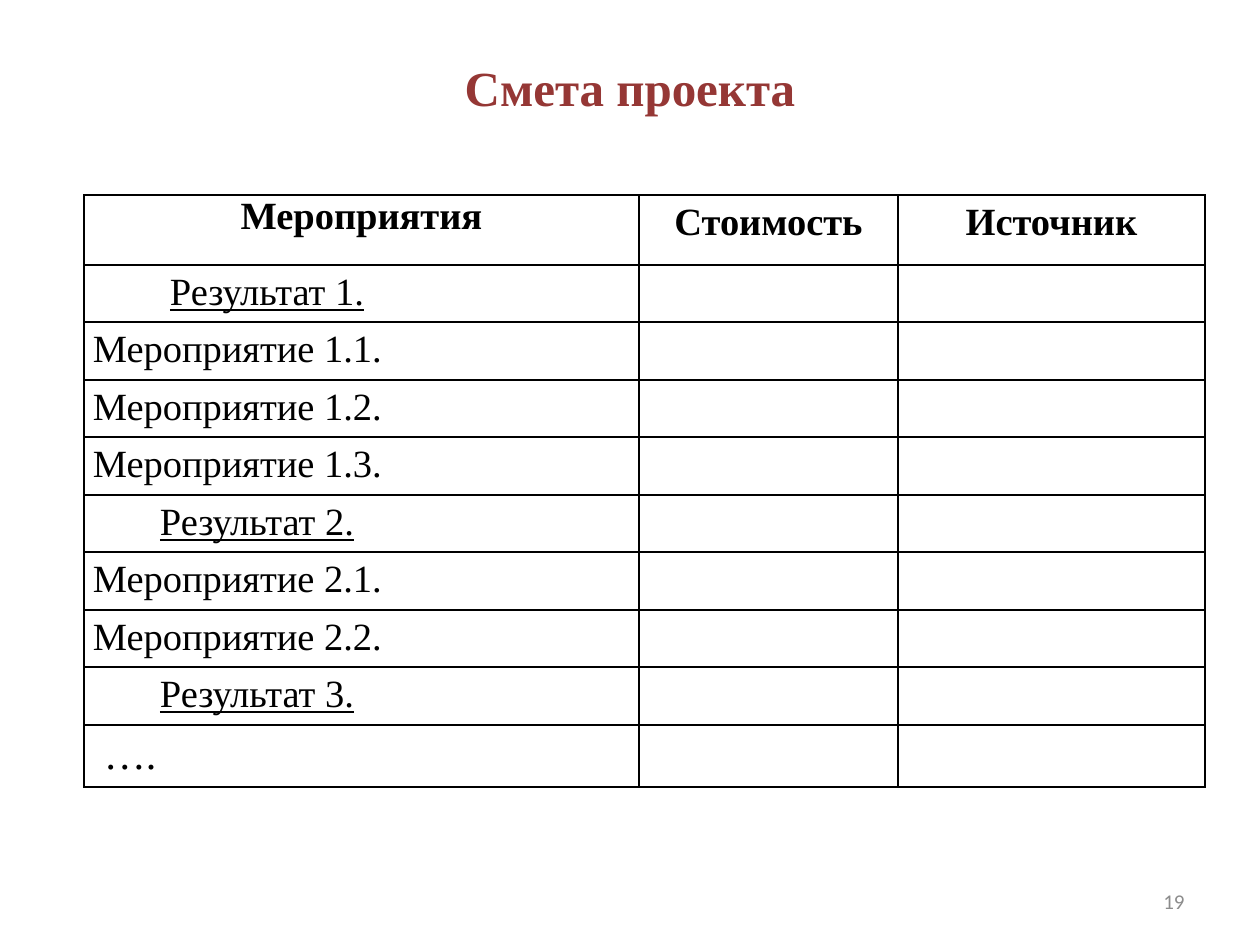
from lxml import etree
from pptx import Presentation
from pptx.dml.color import RGBColor
from pptx.enum.text import MSO_ANCHOR, PP_ALIGN
from pptx.oxml.ns import qn
from pptx.util import Pt

LEFT, CENTER, RIGHT = PP_ALIGN.LEFT, PP_ALIGN.CENTER, PP_ALIGN.RIGHT
MIDDLE = MSO_ANCHOR.MIDDLE
TITLE_ONLY = 5
SERIF = "Times New Roman"

HEADERS = ["Мероприятия", "Стоимость", "Источник"]
# Text, left indent in px, underlined, size in points
ITEMS = [
    ("Результат 1.", 77, True, 22),
    ("Мероприятие 1.1.", 0, False, 22),
    ("Мероприятие 1.2.", 0, False, 22),
    ("Мероприятие 1.3.", 0, False, 22),
    ("Результат 2.", 67, True, 22),
    ("Мероприятие 2.1.", 0, False, 22),
    ("Мероприятие 2.2.", 0, False, 22),
    ("Результат 3.", 67, True, 22),
    ("….", 11, False, 24),
]
COL_WIDTHS = [555, 259, 307]
HEADER_HEIGHT, LAST_HEIGHT = 70, 62


def px(n):
    return round(n * 914400 / 126)


def color(value):
    return RGBColor.from_string(value)


def place(shape, left, top, width, height):
    shape.left, shape.top = px(left), px(top)
    shape.width, shape.height = px(width), px(height)


def write(tf, text, size, font, fill, align=LEFT, bold=False):
    tf.text = text
    p = tf.paragraphs[0]
    p.alignment = align
    p.font.name, p.font.size, p.font.bold = font, Pt(size), bold
    p.font.color.rgb = color(fill)
    return p


def space(p):
    p.line_spacing = 1.15
    p.space_before = p.space_after = Pt(3)


def format_cell(cell):
    cell.margin_left = cell.margin_right = px(9)
    cell.margin_top = cell.margin_bottom = 0
    tc_pr = cell._tc.get_or_add_tcPr()
    for side in ("a:lnL", "a:lnR", "a:lnT", "a:lnB"):
        ln = etree.SubElement(tc_pr, qn(side), w=str(Pt(1)))
        line_fill = etree.SubElement(ln, qn("a:solidFill"))
        etree.SubElement(line_fill, qn("a:srgbClr"), val="000000")
    cell.fill.background()


def add_title(slide, text):
    sp = slide.shapes.title
    place(sp, 63, 38, 1134, 97)
    sp.text_frame.vertical_anchor = MIDDLE
    write(sp.text_frame, text, 28, SERIF, "953735", CENTER, True)


def add_page_number(slide, text):
    sp = slide.shapes.add_textbox(0, 0, 0, 0)
    place(sp, 903, 876, 294, 50)
    tf = sp.text_frame
    tf.word_wrap = True
    tf.vertical_anchor = MIDDLE
    write(tf, text, 12, "Calibri", "8C8C8C", RIGHT)


def add_budget_table(slide):
    # Equal rows of 57.5 px, rounded so that pairs add up to 115
    middle = [115 * (i + 1) // 2 - 115 * i // 2 for i in range(len(ITEMS) - 1)]
    heights = [HEADER_HEIGHT, *middle, LAST_HEIGHT]
    frame = slide.shapes.add_table(
        len(heights), len(COL_WIDTHS), px(84), px(195),
        px(sum(COL_WIDTHS)), px(sum(heights)))
    table = frame.table
    for column, width in zip(table.columns, COL_WIDTHS):
        column.width = px(width)
    for row, height in zip(table.rows, heights):
        row.height = px(height)
    for cell in table.iter_cells():
        format_cell(cell)

    # Header row: the first heading sits at the top of its cell
    for i, text in enumerate(HEADERS):
        p = write(table.cell(0, i).text_frame, text, 22, SERIF, "000000", CENTER, True)
        if i:
            space(p)
        else:
            p.space_after = Pt(6)

    # Results and activities
    for i, (text, indent, underline, size) in enumerate(ITEMS, start=1):
        p = write(table.cell(i, 0).text_frame, text, size, SERIF, "000000")
        space(p)
        p.font.underline = underline
        p._p.get_or_add_pPr().set("marL", str(px(indent)))


def main():
    prs = Presentation()
    prs.slide_width, prs.slide_height = px(1260), px(945)
    slide = prs.slides.add_slide(prs.slide_layouts[TITLE_ONLY])
    add_title(slide, "Смета проекта")
    add_budget_table(slide)
    add_page_number(slide, "19")
    prs.save("out.pptx")


if __name__ == "__main__":
    main()
